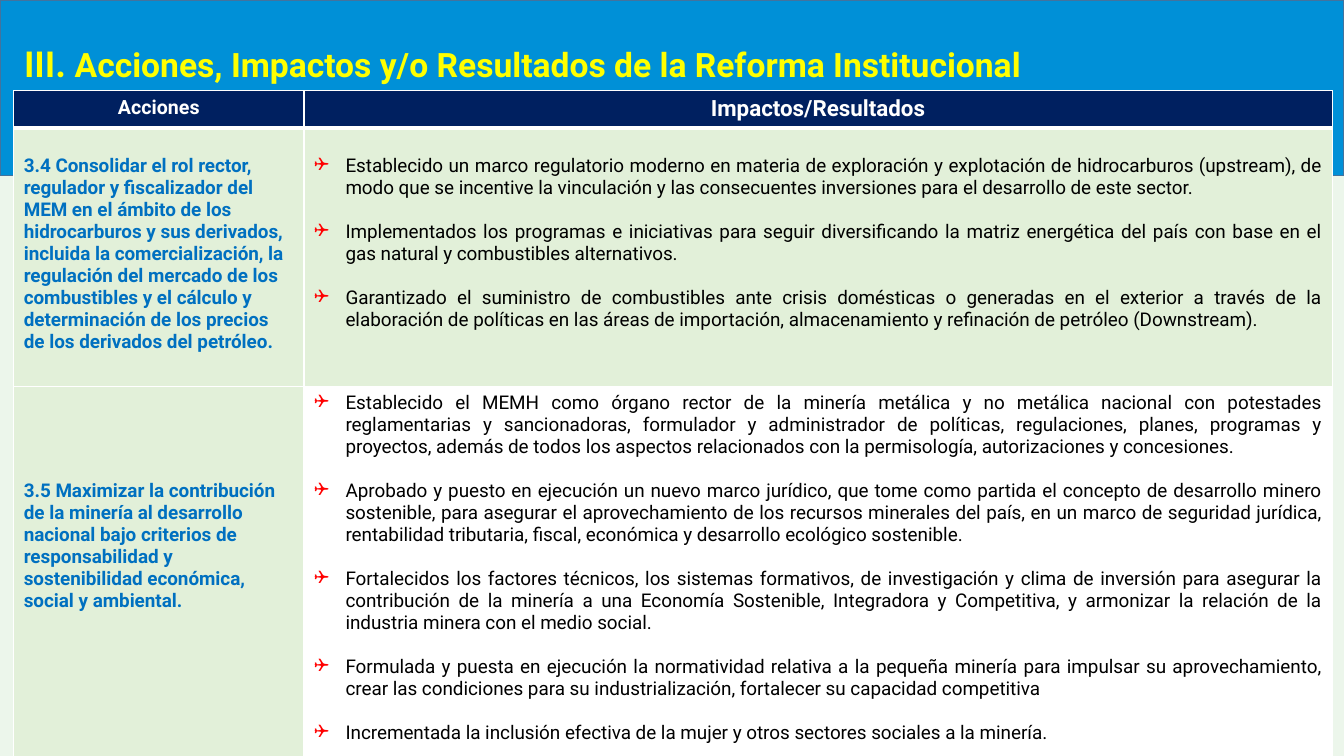
from lxml import etree
from pptx import Presentation
from pptx.dml.color import RGBColor
from pptx.enum.shapes import MSO_SHAPE
from pptx.enum.text import MSO_ANCHOR, PP_ALIGN
from pptx.oxml.ns import qn
from pptx.util import Pt

RECT = MSO_SHAPE.RECTANGLE
MIDDLE = MSO_ANCHOR.MIDDLE
LEFT, CENTER, JUSTIFY = PP_ALIGN.LEFT, PP_ALIGN.CENTER, PP_ALIGN.JUSTIFY

COLORS = {
    "background": "ECF6EB", "banner": "0090D7", "banner_line": "43739E",
    "title": "FFFF00", "header": "002060", "green": "E2F0D9",
    "white": "FFFFFF", "black": "000000", "action": "0070C0", "bullet": "FF0000",
}
FONT = "Roboto"
BODY_SIZE = 13.5
LINE = 15.8       # height of one line of body text
MARGIN = 3.6      # top margin of a cell
INDENT = 22.5

HEADERS = [("Acciones", 14), ("Impactos/Resultados", 16)]

ACTION_34 = (
    "3.4 Consolidar el rol rector, regulador y fiscalizador del MEM en el ámbito de los "
    "hidrocarburos y sus derivados, incluida la comercialización, la regulación del mercado de "
    "los combustibles y el cálculo y determinación de los precios de los derivados del petróleo."
)
RESULTS_34 = [
    "Establecido un marco regulatorio moderno en materia de exploración y explotación de "
    "hidrocarburos (upstream), de modo que se incentive la vinculación y las consecuentes "
    "inversiones para el desarrollo de este sector.",
    "Implementados los programas e iniciativas para seguir diversificando la matriz energética "
    "del país con base en el gas natural y combustibles alternativos.",
    "Garantizado el suministro de combustibles ante crisis domésticas o generadas en el exterior "
    "a través de la elaboración de políticas en las áreas de importación, almacenamiento y "
    "refinación de petróleo (Downstream).",
]
ACTION_35 = (
    "3.5 Maximizar la contribución de la minería al desarrollo nacional bajo criterios de "
    "responsabilidad y sostenibilidad económica, social y ambiental."
)
RESULTS_35 = [
    "Establecido el MEMH como órgano rector de la minería metálica y no metálica nacional con "
    "potestades reglamentarias y sancionadoras, formulador y administrador de políticas, "
    "regulaciones, planes, programas y proyectos, además de todos los aspectos relacionados con "
    "la permisología, autorizaciones y concesiones.",
    "Aprobado y puesto en ejecución un nuevo marco jurídico, que tome como partida el concepto "
    "de desarrollo minero sostenible, para asegurar el aprovechamiento de los recursos minerales "
    "del país, en un marco de seguridad jurídica, rentabilidad tributaria, fiscal, económica y "
    "desarrollo ecológico sostenible.",
    "Fortalecidos los factores técnicos, los sistemas formativos, de investigación y clima de "
    "inversión para asegurar la contribución de la minería a una Economía Sostenible, Integradora "
    "y Competitiva, y armonizar la relación de la industria minera con el medio social.",
    "Formulada y puesta en ejecución la normatividad relativa a la pequeña minería para impulsar "
    "su aprovechamiento, crear las condiciones para su industrialización, fortalecer su capacidad "
    "competitiva",
    "Incrementada la inclusión efectiva de la mujer y otros sectores sociales a la minería.",
]
# Action, blank lines above it, results, blank lines above them, fill of the results
ROWS = [
    (ACTION_34, 1, RESULTS_34, 1, "green"),
    (ACTION_35, 4, RESULTS_35, 0, "white"),
]
COLUMN_WIDTHS = [207.3, 734.4]
ROW_HEIGHTS = [26.4, 185, 299]


def rgb(name):
    return RGBColor.from_string(COLORS[name])


def add_run(p, text, size, color, bold=False, font=FONT):
    r = p.add_run()
    r.text = text
    r.font.name, r.font.size, r.font.bold = font, Pt(size), bold
    r.font.color.rgb = rgb(color)


def add_color(parent, name):
    etree.SubElement(parent, qn("a:srgbClr"), val=COLORS[name])


def add_bullet(p):
    pPr = p._p.get_or_add_pPr()
    pPr.set("marL", str(Pt(INDENT)))
    pPr.set("indent", str(-Pt(INDENT)))
    add_color(etree.SubElement(pPr, qn("a:buClr")), "bullet")
    etree.SubElement(pPr, qn("a:buFont"), typeface="Wingdings")
    etree.SubElement(pPr, qn("a:buChar"), char="❑")


def style_cell(cell, fill, top=MARGIN, bottom_line=1):
    tcPr = cell._tc.get_or_add_tcPr()
    for side, width in (("L", 1), ("R", 1), ("T", 1), ("B", bottom_line)):
        ln = etree.SubElement(tcPr, qn(f"a:ln{side}"), w=str(Pt(width)))
        add_color(etree.SubElement(ln, qn("a:solidFill")), "white")
    cell.fill.solid()
    cell.fill.fore_color.rgb = rgb(fill)
    cell.margin_top = Pt(top)


def fill_cell(cell, text, size, color, align):
    p = cell.text_frame.paragraphs[0]
    p.alignment = align
    add_run(p, text, size, color, bold=True)


def fill_results(cell, results):
    tf = cell.text_frame
    for i, text in enumerate(results):
        p = tf.add_paragraph() if i else tf.paragraphs[0]
        p.alignment = JUSTIFY
        if i:
            p.space_before = Pt(LINE)
        add_bullet(p)
        add_run(p, text, BODY_SIZE, "black")


def add_banner(slide):
    sp = slide.shapes.add_shape(RECT, 0, 0, Pt(960), Pt(125.3))
    sp.shadow.inherit = False
    sp.fill.solid()
    sp.fill.fore_color.rgb = rgb("banner")
    sp.line.color.rgb = rgb("banner_line")
    sp.line.width = Pt(1)
    # The banner lies behind the title
    slide.shapes._spTree.insert(2, sp._element)


def set_title(slide):
    sp = slide.shapes.title
    sp.left, sp.top, sp.width, sp.height = Pt(10), Pt(23.8), Pt(866), Pt(41)
    tf = sp.text_frame
    tf.word_wrap = True
    tf.vertical_anchor = MIDDLE
    p = tf.paragraphs[0]
    p.alignment = LEFT
    add_run(p, "III. ", 28, "title", True, "Calibri")
    add_run(p, "Acciones, Impactos y/o Resultados de la Reforma Institucional", 24, "title", True)


def add_results_table(slide):
    frame = slide.shapes.add_table(len(ROW_HEIGHTS), len(COLUMN_WIDTHS), Pt(9.8), Pt(64.8),
                                   Pt(sum(COLUMN_WIDTHS)), Pt(sum(ROW_HEIGHTS)))
    table = frame.table
    for column, width in zip(table.columns, COLUMN_WIDTHS):
        column.width = Pt(width)
    for row, height in zip(table.rows, ROW_HEIGHTS):
        row.height = Pt(height)

    # Header row
    for i, (text, size) in enumerate(HEADERS):
        cell = table.cell(0, i)
        style_cell(cell, "header", bottom_line=3)
        fill_cell(cell, text, size, "white", CENTER)

    # One row per action
    for i, (action, action_gap, results, results_gap, fill) in enumerate(ROWS, 1):
        left, right = table.cell(i, 0), table.cell(i, 1)
        style_cell(left, "green", MARGIN + action_gap * LINE)
        fill_cell(left, action, BODY_SIZE, "action", LEFT)
        style_cell(right, fill, MARGIN + results_gap * LINE)
        fill_results(right, results)


def main():
    prs = Presentation()
    prs.slide_width, prs.slide_height = Pt(960), Pt(540)
    slide = prs.slides.add_slide(prs.slide_layouts[5])
    slide.background.fill.solid()
    slide.background.fill.fore_color.rgb = rgb("background")
    add_banner(slide)
    set_title(slide)
    add_results_table(slide)
    prs.save("out.pptx")


if __name__ == "__main__":
    main()
